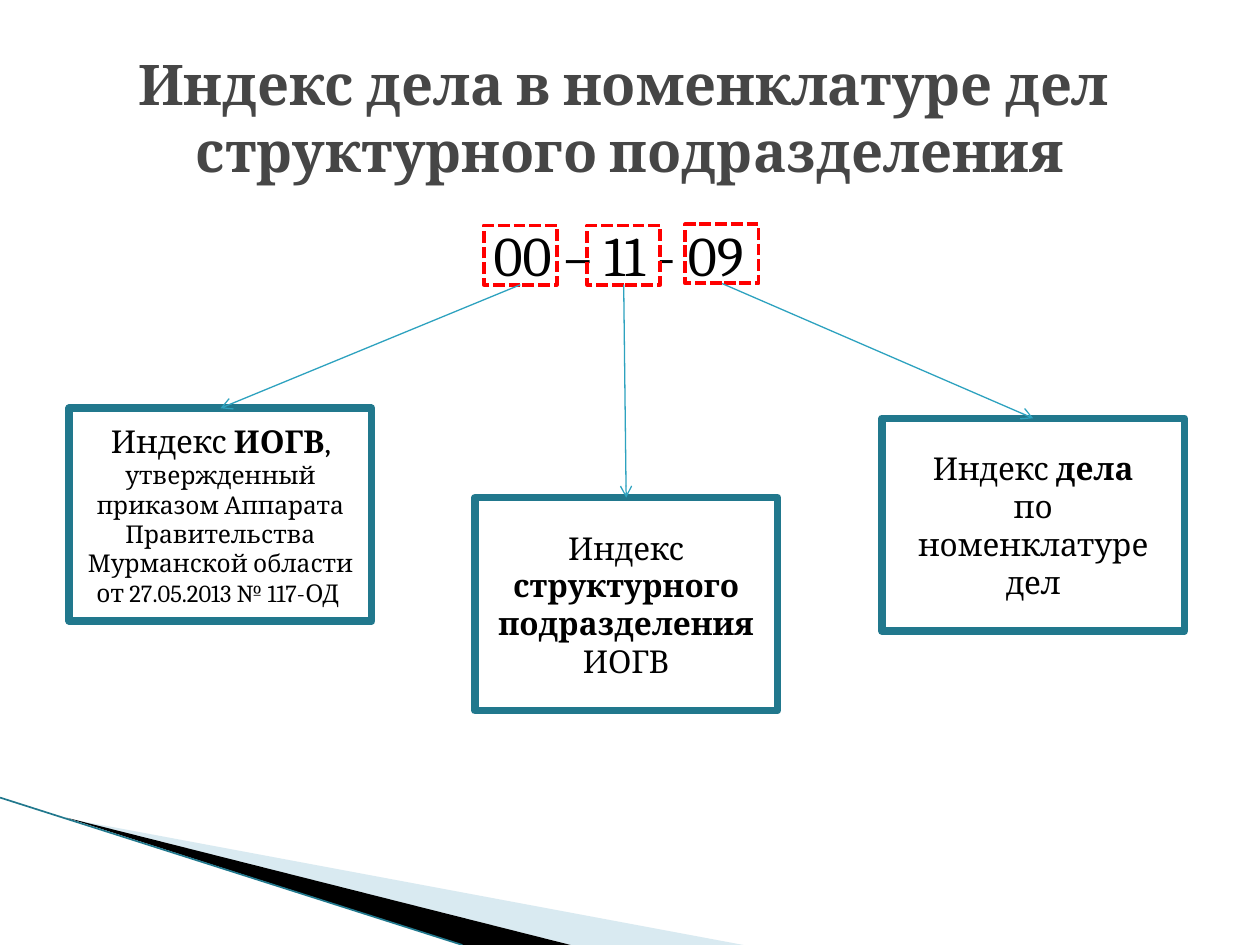
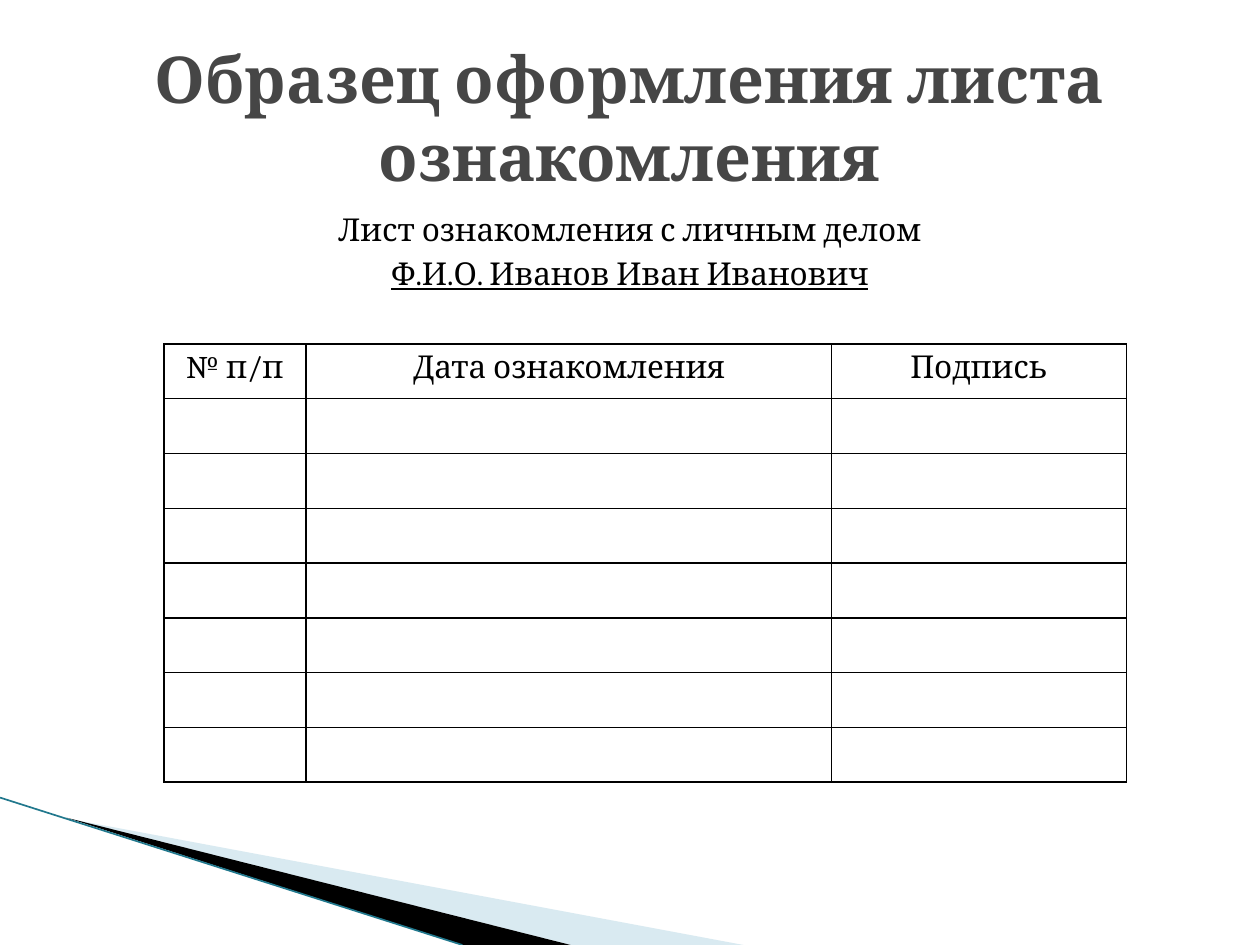
from lxml import etree
from pptx import Presentation
from pptx.dml.color import RGBColor
from pptx.enum import dml, shapes, text
from pptx.oxml.ns import qn
from pptx.util import Inches, Pt

FONT = "Cambria"
BLACK = RGBColor(0x00, 0x00, 0x00)
WHITE = RGBColor(0xFF, 0xFF, 0xFF)
GRAY = RGBColor(0x46, 0x46, 0x46)
TEAL = RGBColor(0x21, 0x78, 0x8D)
CYAN = RGBColor(0x2D, 0xA2, 0xBF)
PALE = RGBColor(0xA0, 0xCB, 0xDC)
RED = RGBColor(0xFF, 0x00, 0x00)


def style(run, size, color=BLACK, bold=False):
    run.font.name = FONT
    run.font.size = Pt(size)
    run.font.color.rgb = color
    run.font.bold = bold


def add_text(slide, box, lines, size, color=BLACK, bold=False,
             align=text.PP_ALIGN.CENTER, anchor=text.MSO_ANCHOR.TOP):
    frame = slide.shapes.add_textbox(*map(Inches, box)).text_frame
    frame.word_wrap = True
    frame.vertical_anchor = anchor
    frame.text = "\n".join(lines)
    for para in frame.paragraphs:
        para.alignment = align
        for run in para.runs:
            style(run, size, color, bold)
    return frame


def add_line(slide, start, end, color, width, arrow=False):
    line = slide.shapes.add_connector(
        shapes.MSO_CONNECTOR.STRAIGHT, *map(Inches, (*start, *end)))
    line.line.color.rgb = color
    line.line.width = Pt(width)
    if arrow:
        etree.SubElement(line.line._get_or_add_ln(), qn("a:tailEnd"), type="arrow")
    etree.SubElement(line._element.spPr, qn("a:effectLst"))


def add_wedge(slide, points, color, alpha=None):
    first, *rest = [(Inches(x), Inches(y)) for x, y in points]
    path = slide.shapes.build_freeform(*first)
    path.add_line_segments(rest, close=True)
    wedge = path.convert_to_shape()
    wedge.shadow.inherit = False
    wedge.fill.solid()
    wedge.fill.fore_color.rgb = color
    wedge.line.fill.background()
    if alpha:
        tint = wedge._element.spPr.find(".//" + qn("a:srgbClr"))
        etree.SubElement(tint, qn("a:alpha"), val=str(alpha * 1000))


def add_base(deck, title, size):
    """Blank slide with the corner wedges and the title."""
    slide = deck.slides.add_slide(deck.slide_layouts[6])
    add_wedge(slide, [(0.55, 6.5), (5.9, 7.5), (4.53, 7.5)], PALE, 40)
    add_wedge(slide, [(0.53, 6.49), (4.53, 7.5), (3.67, 7.5)], BLACK)
    add_line(slide, (0, 6.33), (3.67, 7.5), TEAL, 0.95)
    add_text(slide, (0.5, 0.3, 9, 1.25), [title], size, GRAY, True,
             anchor=text.MSO_ANCHOR.MIDDLE)
    return slide


def add_rect(slide, box, color, width):
    rect = slide.shapes.add_shape(shapes.MSO_SHAPE.RECTANGLE, *map(Inches, box))
    rect.shadow.inherit = False
    rect.line.color.rgb = color
    rect.line.width = Pt(width)
    return rect


def add_card(slide, box, paras):
    """Framed note; each paragraph is a list of (text, size, bold)."""
    card = add_rect(slide, box, TEAL, 4.33)
    card.fill.solid()
    card.fill.fore_color.rgb = WHITE
    frame = card.text_frame
    frame.word_wrap = True
    frame.vertical_anchor = text.MSO_ANCHOR.MIDDLE
    frame.margin_left = frame.margin_right = Inches(0.12)
    for i, parts in enumerate(paras):
        para = frame.add_paragraph() if i else frame.paragraphs[0]
        para.alignment = text.PP_ALIGN.CENTER
        for words, size, bold in parts:
            run = para.add_run()
            run.text = words
            style(run, size, bold=bold)


def add_mark(slide, box):
    """Dashed frame around one part of the index."""
    mark = add_rect(slide, box, RED, 2.25)
    mark.fill.background()
    mark.line.dash_style = dml.MSO_LINE.SQUARE_DOT


def index_slide(deck):
    slide = add_base(
        deck, "Индекс дела в номенклатуре дел \vструктурного подразделения", 32)
    add_text(slide, (3.82, 1.7, 2.32, 0.64), ["00 – 11 - 09"], 32,
             align=text.PP_ALIGN.LEFT)
    # Mark corner, card corner and card text for each part of the index
    parts = [
        ((3.84, 1.79), (0.55, 3.24), [[
            ("Индекс ", 18, False), ("ИОГВ", 18, True), (", ", 18, False),
            ("утвержденный приказом Аппарата Правительства "
             "Мурманской области от 27.05.2013 № 117-ОД ", 14, False)]]),
        ((4.66, 1.79), (3.77, 3.95), [[
            ("Индекс ", 18, False), ("структурного подразделения ", 18, True),
            ("ИОГВ", 18, False)]]),
        ((5.44, 1.78), (7, 3.32), [
            [("Индекс ", 18, False), ("дела", 18, True)],
            [("по номенклатуре дел", 18, False)]]),
    ]
    wide, high = 0.58, 0.47
    span, tall = 2.4, 1.69
    for (mx, my), (cx, cy), paras in parts:
        add_card(slide, (cx, cy, span, tall), paras)
        add_mark(slide, (mx, my, wide, high))
        add_line(slide, (mx + wide / 2, my + high), (cx + span / 2, cy),
                 CYAN, 0.75, arrow=True)


def add_edges(cell):
    props = cell._tc.get_or_add_tcPr()
    for i, side in enumerate(("lnL", "lnR", "lnT", "lnB")):
        edge = etree.Element(qn("a:" + side), w=str(Pt(1)))
        fill = etree.SubElement(edge, qn("a:solidFill"))
        etree.SubElement(fill, qn("a:srgbClr"), val=str(BLACK))
        props.insert(i, edge)


def add_grid(slide, box, heads, widths, count):
    """Ruled table with a heading row and empty rows below."""
    grid = slide.shapes.add_table(count, len(heads), *map(Inches, box)).table
    for col, width in zip(grid.columns, widths):
        col.width = Inches(width)
    for row in grid.rows:
        row.height = Inches(box[3] / count)
        for cell in row.cells:
            cell.fill.solid()
            cell.fill.fore_color.rgb = WHITE
            add_edges(cell)
    for cell, head in zip(grid.rows[0].cells, heads):
        cell.text_frame.text = head
        para = cell.text_frame.paragraphs[0]
        para.alignment = text.PP_ALIGN.CENTER
        style(para.runs[0], 18)


def sheet_slide(deck):
    slide = add_base(deck, "Образец оформления листа ознакомления", 36.9)
    # Sheet heading
    frame = add_text(slide, (0.5, 1.62, 9, 0.9),
                     ["Лист ознакомления с личным делом",
                      "Ф.И.О. Иванов Иван Иванович"], 18)
    name = frame.paragraphs[1]
    name.space_before = Pt(3.5)
    name.runs[0].font.underline = True
    # Sign-off table
    add_grid(slide, (1.3, 2.73, 7.64, 3.48),
             ("№ п/п", "Дата ознакомления", "Подпись"), (1.13, 4.17, 2.34), 8)


def main():
    deck = Presentation()
    deck.slide_width, deck.slide_height = Inches(10), Inches(7.5)
    index_slide(deck)
    sheet_slide(deck)
    deck.save("out.pptx")


if __name__ == "__main__":
    main()
